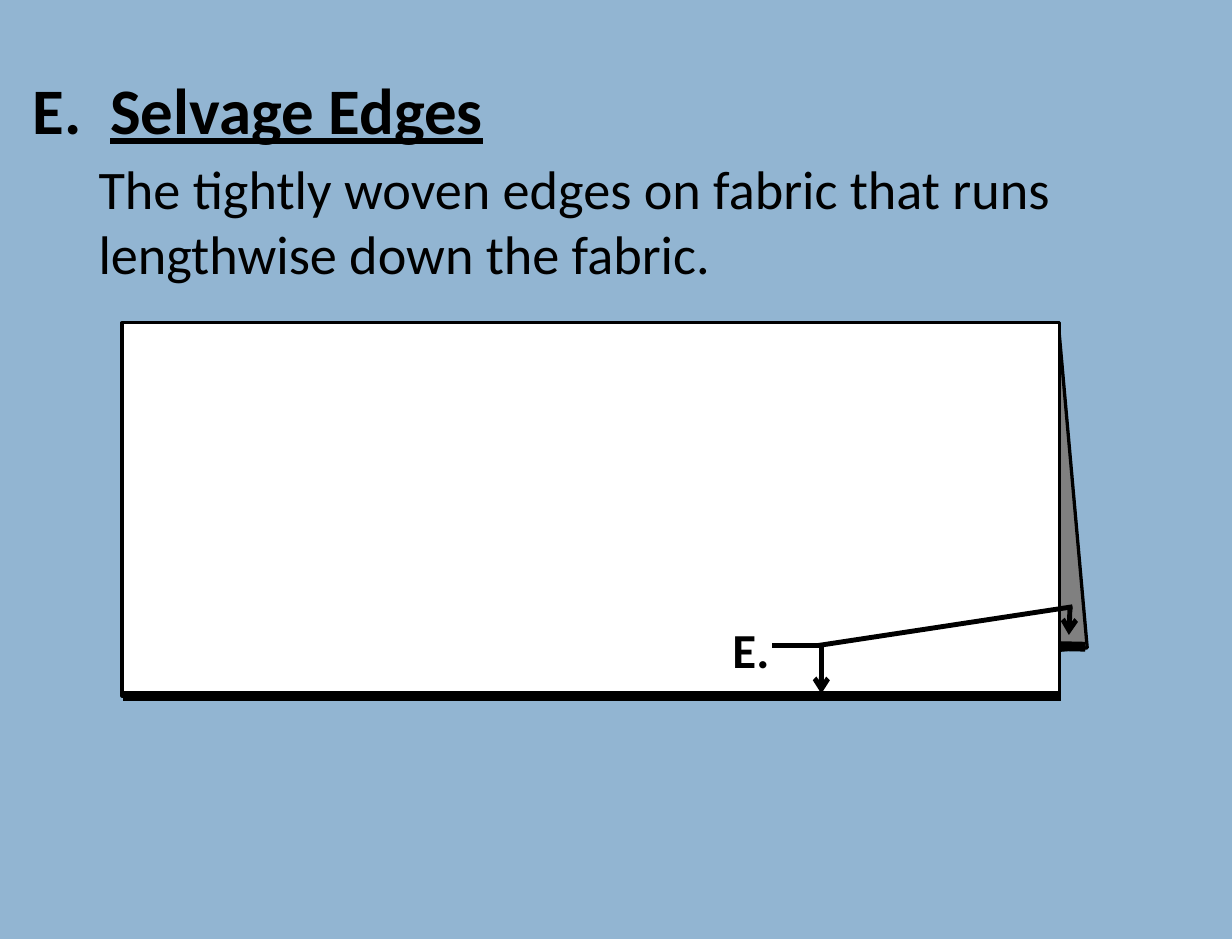
from dataclasses import dataclass

from lxml import etree
from pptx import Presentation
from pptx.dml.color import RGBColor
from pptx.enum.shapes import MSO_CONNECTOR, MSO_SHAPE
from pptx.enum.text import MSO_ANCHOR, MSO_AUTO_SIZE, PP_ALIGN
from pptx.oxml.ns import qn
from pptx.util import Emu, Pt

RECTANGLE = MSO_SHAPE.RECTANGLE
STRAIGHT = MSO_CONNECTOR.STRAIGHT
TOP = MSO_ANCHOR.TOP
NO_AUTOFIT = MSO_AUTO_SIZE.NONE
LEFT, CENTER = PP_ALIGN.LEFT, PP_ALIGN.CENTER

EMU_PER_PX = 9144
FONT = "Calibri"
BLACK, WHITE, GRAY, SKY = "000000", "FFFFFF", "808080", "92B5D2"


@dataclass(frozen=True)
class Panel:
    left: int
    top: int
    width: int
    height: int
    fill: str
    outline: int = 0
    rotation: float = 0


@dataclass(frozen=True)
class Stroke:
    start: tuple[int, int]
    end: tuple[int, int]
    weight: int = 3
    arrow: bool = False


@dataclass(frozen=True)
class Passage:
    spans: tuple[tuple[str, dict], ...]
    margin: int
    indent: int
    format: dict


HEADING = {"size": Pt(39.8), "bold": True}
DEFINITION = {"size": Pt(33.3), "bold": False}
LABEL = {"size": Pt(30), "bold": True}

PASSAGES = (
    Passage(
        (("E.\t", HEADING), ("Selvage Edges", HEADING | {"underline": True})),
        66, -66, {"line_spacing": 0.8, "space_before": Pt(3)},
    ),
    Passage(
        (("The tightly woven edges on fabric that runs lengthwise down the fabric.", DEFINITION),),
        56, 0, {"line_spacing": 1.0, "space_before": Pt(5)},
    ),
)

FABRIC = (
    Panel(117, 312, 799, 276, GRAY, 2, 354.9),
    Panel(125, 595, 353, 55, SKY),
    Stroke((883, 550), (925, 551), 6),
    Panel(104, 275, 799, 318, WHITE, 2),
    Stroke((105, 593), (904, 593), 6),
)

POINTERS = (
    Stroke((700, 549), (700, 591), arrow=True),
    Stroke((702, 550), (658, 550)),
    Stroke((697, 550), (914, 517)),
    Stroke((912, 516), (911, 541), arrow=True),
)


def px(value: int) -> Emu:
    return Emu(value * EMU_PER_PX)


def color(value: str) -> RGBColor:
    return RGBColor.from_string(value)


def apply(target, values: dict) -> None:
    for name, value in values.items():
        setattr(target, name, value)


def place(shape, left: int, top: int, width: int, height: int) -> None:
    apply(shape, {"left": px(left), "top": px(top), "width": px(width), "height": px(height)})


def add_span(para, text: str, values: dict) -> None:
    span = para.add_run()
    span.text = text
    apply(span.font, {"name": FONT} | values)
    span.font.color.rgb = color(BLACK)


def draw_panel(page, panel: Panel) -> None:
    shape = page.shapes.add_shape(
        RECTANGLE, px(panel.left), px(panel.top), px(panel.width), px(panel.height)
    )
    shape.shadow.inherit = False
    shape.rotation = panel.rotation
    shape.fill.solid()
    shape.fill.fore_color.rgb = color(panel.fill)
    if panel.outline:
        shape.line.color.rgb = color(BLACK)
        shape.line.width = Pt(panel.outline)
    else:
        shape.line.fill.background()


def draw_stroke(page, stroke: Stroke) -> None:
    connector = page.shapes.add_connector(
        STRAIGHT, *(px(value) for value in stroke.start + stroke.end)
    )
    connector.line.color.rgb = color(BLACK)
    connector.line.width = Pt(stroke.weight)
    properties = connector._element.spPr
    if stroke.arrow:
        etree.SubElement(properties.find(qn("a:ln")), qn("a:tailEnd"), type="arrow")
    etree.SubElement(properties, qn("a:effectLst"))


def draw_items(page, items: tuple[Panel | Stroke, ...]) -> None:
    for item in items:
        if isinstance(item, Panel):
            draw_panel(page, item)
        else:
            draw_stroke(page, item)


def write_title(page) -> None:
    title = page.shapes.title
    place(title, 17, 67, 1017, 170)
    frame = title.text_frame
    apply(frame, {
        "word_wrap": True, "auto_size": NO_AUTOFIT, "vertical_anchor": TOP,
        "margin_left": px(11), "margin_right": px(11),
        "margin_top": px(5), "margin_bottom": px(5),
    })
    for index, passage in enumerate(PASSAGES):
        para = frame.add_paragraph() if index else frame.paragraphs[0]
        apply(para, {"alignment": LEFT} | passage.format)
        properties = para._p.get_or_add_pPr()
        properties.set("marL", str(px(passage.margin)))
        properties.set("indent", str(px(passage.indent)))
        for text, values in passage.spans:
            add_span(para, text, values)


def write_label(page) -> None:
    box = page.shapes.add_textbox(px(611), px(523), px(58), px(61))
    box.text_frame.word_wrap = False
    para = box.text_frame.paragraphs[0]
    para.alignment = CENTER
    add_span(para, "E.", LABEL)


def main() -> None:
    deck = Presentation()
    apply(deck, {"slide_width": px(1050), "slide_height": px(800)})
    page = deck.slides.add_slide(deck.slide_layouts.get_by_name("Title Only"))
    page.background.fill.solid()
    page.background.fill.fore_color.rgb = color(SKY)
    write_title(page)
    draw_items(page, FABRIC)
    write_label(page)
    draw_items(page, POINTERS)
    deck.save("out.pptx")


if __name__ == "__main__":
    main()
